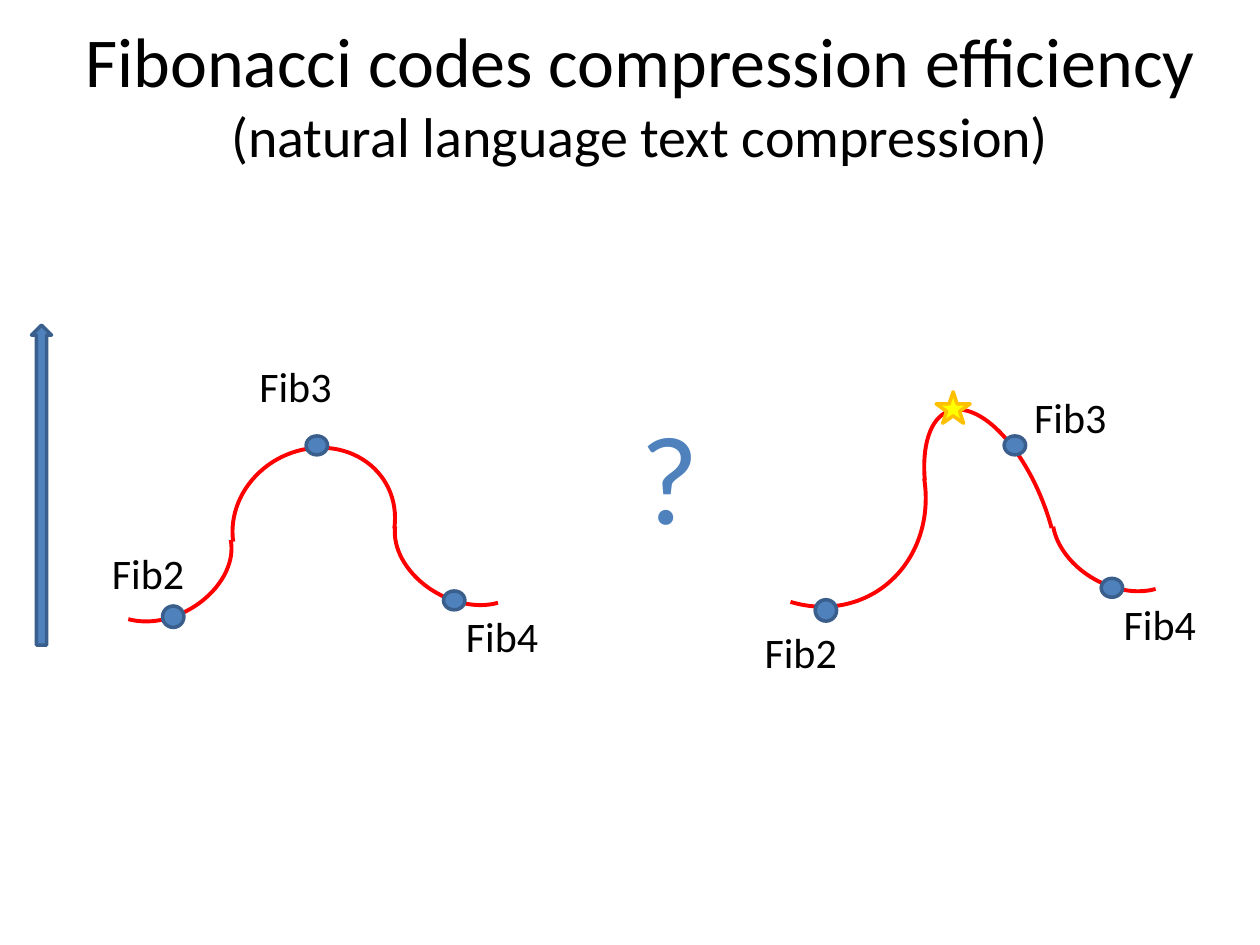
from lxml import etree
from pptx import Presentation
from pptx import util as u
from pptx.dml.color import RGBColor
from pptx.enum import shapes, text
from pptx.oxml.ns import qn

FONT = "Calibri"
BLACK, BLUE, NAVY = "000000", "4F81BD", "3A5F8C"
RED, YELLOW, GOLD = "FF0000", "FFFF00", "FFC000"
SHAPE = shapes.MSO_SHAPE


def rgb(color):
    return RGBColor.from_string(color)


def style_font(font, size, color=BLACK):
    font.name, font.size = FONT, u.Pt(size)
    font.color.rgb = rgb(color)


def add_shape(slide, kind, box, fill, line, weight=2):
    sp = slide.shapes.add_shape(kind, *map(u.Inches, box))
    sp.shadow.inherit = False
    if fill:
        sp.fill.solid()
        sp.fill.fore_color.rgb = rgb(fill)
    else:
        sp.fill.background()
    sp.line.color.rgb = rgb(line)
    sp.line.width = u.Pt(weight)
    return sp


def add_arc(slide, box, rotation, flips, start, end):
    """Draw a red arc; flips holds "H", "V" or both."""
    sp = add_shape(slide, SHAPE.ARC, box, None, RED, 2.25)
    sp.adjustments[0], sp.adjustments[1] = start, end
    sp.rotation = rotation
    xfrm = sp._element.spPr.find(qn("a:xfrm"))
    for axis in flips:
        xfrm.set("flip" + axis, "1")


def add_label(slide, box, words, size=24, color=BLACK, wrap=True, align=None):
    tf = slide.shapes.add_textbox(*map(u.Inches, box)).text_frame
    tf.word_wrap = wrap
    tf.auto_size = text.MSO_AUTO_SIZE.SHAPE_TO_FIT_TEXT
    p = tf.paragraphs[0]
    p.text, p.alignment = words, align
    style_font(p.font, size, color)


def add_text_shadow(run):
    rpr = run._r.get_or_add_rPr()
    effects = etree.Element(qn("a:effectLst"))
    shadow = etree.SubElement(effects, qn("a:outerShdw"), blurRad="38100",
                              dist="38100", dir="2700000", algn="tl")
    color = etree.SubElement(shadow, qn("a:srgbClr"), val=BLACK)
    etree.SubElement(color, qn("a:alpha"), val="43000")
    rpr.find(qn("a:solidFill")).addnext(effects)


def add_title(slide, box):
    title = slide.shapes.title
    title.left, title.top, title.width, title.height = map(u.Inches, box)
    tf = title.text_frame
    tf.auto_size = text.MSO_AUTO_SIZE.NONE
    tf.vertical_anchor = text.MSO_ANCHOR.MIDDLE
    p = tf.paragraphs[0]
    p.alignment = text.PP_ALIGN.CENTER
    lines = [("Fibonacci codes compression efficiency", 40),
             ("(natural language text compression)", 32)]
    for i, (words, size) in enumerate(lines):
        if i:
            p.add_line_break()
        r = p.add_run()
        r.text = words
        style_font(r.font, size)
        add_text_shadow(r)


def add_curve(slide, left, top, arcs, codes, peak=None):
    """Draw an efficiency curve with its codes, placed from a corner."""
    for (x, y, w, h), *bend in arcs:
        add_arc(slide, (left + x, top + y, w, h), *bend)
    for name, (x, y, h), (label_x, label_y) in codes:
        add_shape(slide, SHAPE.OVAL, (left + x, top + y, 0.17, h), BLUE, NAVY)
        add_label(slide, (left + label_x, top + label_y, 1.43, 0.5), name)
    if peak:
        x, y = peak
        add_shape(slide, SHAPE.STAR_5_POINT, (left + x, top + y, 0.27, 0.25),
                  YELLOW, GOLD)


def main():
    prs = Presentation()
    prs.slide_width, prs.slide_height = u.Inches(10), u.Inches(7.5)
    slide = prs.slides.add_slide(prs.slide_layouts[5])
    add_title(slide, (0.39, 0.3, 9.38, 0.87))
    add_shape(slide, SHAPE.UP_ARROW, (0.25, 2.58, 0.16, 2.54), BLUE, NAVY)
    add_curve(
        slide, 0.73, 2.8,
        arcs=[((2.37, 1.13, 1.14, 0.83), 209.4, "H", 115.24, 199.27),
              ((0, 1.26, 1.14, 0.83), 150.6, "", 113.84, 199.27),
              ((1.1, 0.77, 1.32, 1.19), 150.6, "HV", 118.53, 19.3)],
        codes=[("Fib2", (0.56, 2.01, 0.17), (0.06, 1.5)),
               ("Fib3", (1.7, 0.66, 0.15), (1.23, 0.01)),
               ("Fib4", (2.79, 1.89, 0.15), (2.87, 2))])
    add_label(slide, (4.98, 3.11, 0.67, 1.31), "?", 72, BLUE, wrap=False,
              align=text.PP_ALIGN.CENTER)
    add_curve(
        slide, 5.57, 2.8,
        arcs=[((0, 0.09, 1.75, 1.95), 149.5, "", 123.76, 186.69),
              ((2.75, 1.02, 1.14, 0.83), 209.4, "H", 122.05, 199.27),
              ((1.86, 0.4, 0.88, 1.9), 158.8, "HV", 140.28, 15.6)],
        codes=[("Fib2", (0.9, 1.96, 0.17), (0.4, 2.12)),
               ("Fib3", (2.4, 0.66, 0.15), (2.54, 0.26)),
               ("Fib4", (3.17, 1.79, 0.15), (3.25, 1.9))],
        peak=(1.86, 0.31))
    prs.save("out.pptx")


if __name__ == "__main__":
    main()
